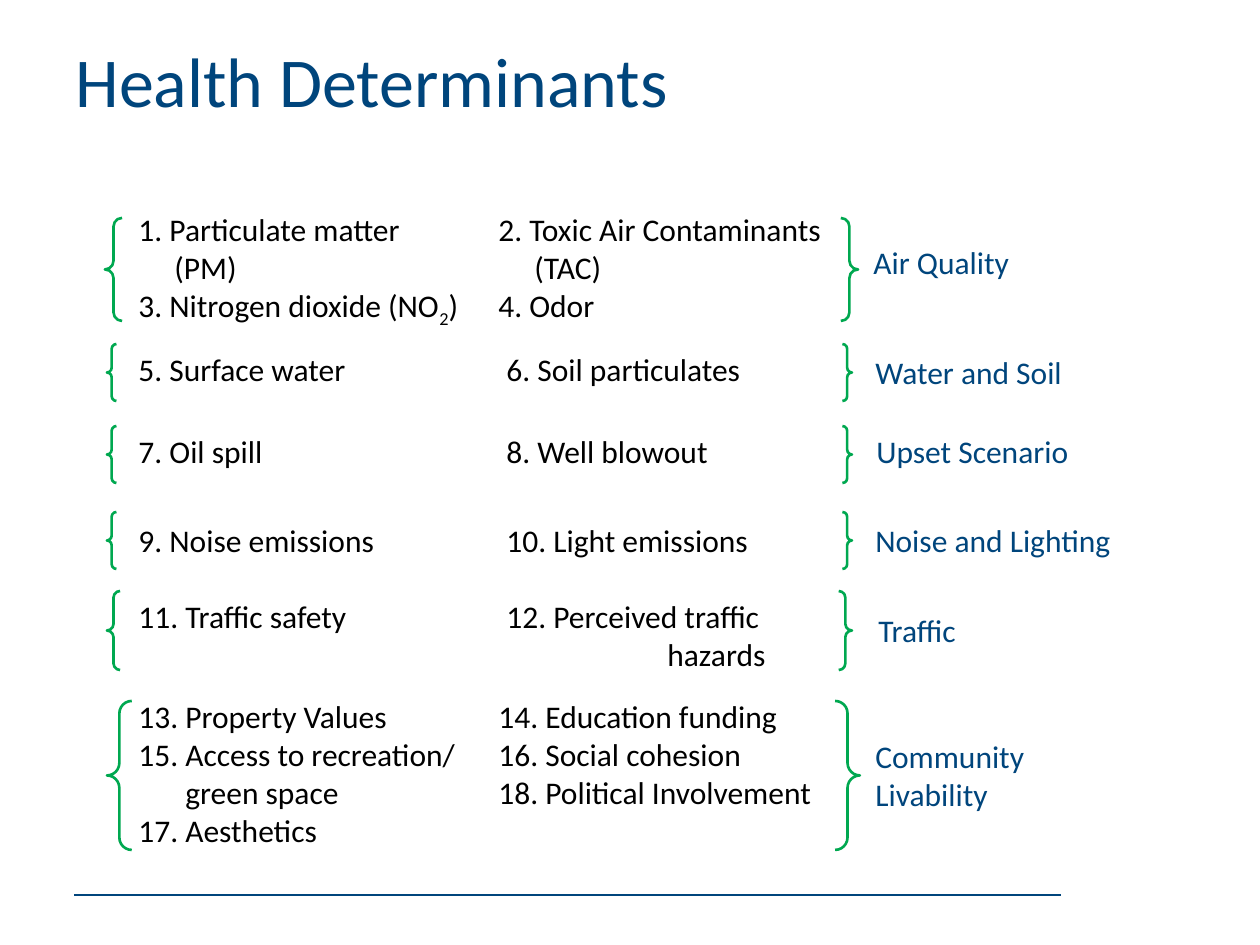
from pptx import Presentation
from pptx.dml.color import RGBColor
from pptx.enum.shapes import MSO_CONNECTOR, MSO_SHAPE
from pptx.enum.text import MSO_ANCHOR, MSO_AUTO_SIZE, PP_ALIGN
from pptx.oxml.ns import qn
from pptx.util import Pt
from lxml import etree

BRACES = MSO_SHAPE.BRACE_PAIR if hasattr(MSO_SHAPE, "BRACE_PAIR") else MSO_SHAPE.DOUBLE_BRACE
STRAIGHT = MSO_CONNECTOR.STRAIGHT
MIDDLE = MSO_ANCHOR.MIDDLE
GROW = MSO_AUTO_SIZE.SHAPE_TO_FIT_TEXT
LEFT = PP_ALIGN.LEFT

PX = 914400 / 126
TITLE_ONLY = 5
COLORS = {"blue": "00457C", "green": "00A850", "black": "000000"}


def emu(*lengths):
    return [round(n * PX) for n in lengths]


def rgb(name):
    return RGBColor.from_string(COLORS[name])


class Deck:
    font = "Calibri"
    body_size = 18
    title_size = 40

    def __init__(self, width, height):
        self.prs = Presentation()
        self.prs.slide_width, self.prs.slide_height = emu(width, height)
        self.s = self.prs.slides.add_slide(self.prs.slide_layouts[TITLE_ONLY])

    def run(self, p, text, size, color):
        r = p.add_run()
        r.text = text
        values = {"name": self.font, "size": Pt(size), "bold": False}
        for key, value in values.items():
            setattr(r.font, key, value)
        r.font.color.rgb = rgb(color)
        return r

    def title(self, text, *box):
        sp = self.s.shapes.title
        for key, value in zip(("left", "top", "width", "height"), emu(*box)):
            setattr(sp, key, value)
        sp.text_frame.vertical_anchor = MIDDLE
        p = sp.text_frame.paragraphs[0]
        p.alignment = LEFT
        self.run(p, text, self.title_size, "blue")

    def text(self, lines, *box, color="black", grow=False):
        """Each line is a string, or a pair of string and left indent."""
        tf = self.s.shapes.add_textbox(*emu(*box)).text_frame
        tf.word_wrap = True
        if grow:
            tf.auto_size = GROW
        for i, line in enumerate(lines):
            text, indent = line if isinstance(line, tuple) else (line, 0)
            p = tf.add_paragraph() if i else tf.paragraphs[0]
            if indent:
                p._p.get_or_add_pPr().set("marL", str(*emu(indent)))
            head, sub, tail = text.partition("₂")
            self.run(p, head, self.body_size, color)
            if sub:
                r = self.run(p, "2", self.body_size, color)
                r._r.get_or_add_rPr().set("baseline", "-25000")
                self.run(p, tail, self.body_size, color)

    def braces(self, *box):
        sp = self.s.shapes.add_shape(BRACES, *emu(*box))
        sp.shadow.inherit = False
        sp.fill.background()
        sp.line.color.rgb = rgb("green")
        sp.line.width = Pt(1.5)

    def rule(self, x1, x2, y):
        c = self.s.shapes.add_connector(STRAIGHT, *emu(x1, y, x2, y))
        c.line.color.rgb = rgb("blue")
        c.line.width = Pt(0.75)
        etree.SubElement(c._element.spPr, qn("a:effectLst"))


# Each group: label, label (left, top, height), braces (left, top, width, height),
# text top and height, left column lines, right column left edge and lines
GROUPS = [
    ("Air Quality", (861, 237, 50), (105, 218, 753, 103), (204, 139),
     ["1. Particulate matter", ("(PM)", 36), "3. Nitrogen dioxide (NO₂)"],
     486, ["2. Toxic Air Contaminants", ("(TAC)", 36), "4. Odor"]),
    ("Water and Soil", (863, 347, 50), (107, 344, 745, 57), (344, 57),
     ["5. Surface water"], 494, ["6. Soil particulates"]),
    ("Upset Scenario", (864, 426, 50), (107, 426, 745, 57), (426, 57),
     ["7. Oil spill"], 494, ["8. Well blowout"]),
    ("Noise and Lighting", (863, 515, 50), (107, 512, 745, 57), (515, 57),
     ["9. Noise emissions"], 494, ["10. Light emissions"]),
    ("Traffic", (866, 605, 50), (107, 591, 745, 79), (591, 57),
     ["11. Traffic safety"], 494, ["12. Perceived traffic", ("hazards", 161)]),
    ("Community Livability", (863, 731, 89), (107, 701, 753, 149), (691, 149),
     ["13. Property Values", "15. Access to recreation/", ("green space", 47),
      "17. Aesthetics"],
     486, ["14. Education funding", "16. Social cohesion",
           "18. Political Involvement"]),
]
LEFT_COLUMN, COLUMN_WIDTH, LABEL_RIGHT = 126, 394, 1129


def main():
    deck = Deck(1260, 945)

    # Title and footer rule
    deck.rule(1061, 74, 895)
    deck.title("Health Determinants", 63, 0, 1134, 158)

    # Braced groups with their two columns and label
    for label, (x, y, h), braces, (top, height), left, right_x, right in GROUPS:
        deck.braces(*braces)
        deck.text([label], x, y, LABEL_RIGHT - x, h, color="blue", grow=True)
        deck.text(left, LEFT_COLUMN, top, COLUMN_WIDTH, height)
        deck.text(right, right_x, top, COLUMN_WIDTH, height)

    deck.prs.save("out.pptx")


if __name__ == "__main__":
    main()
